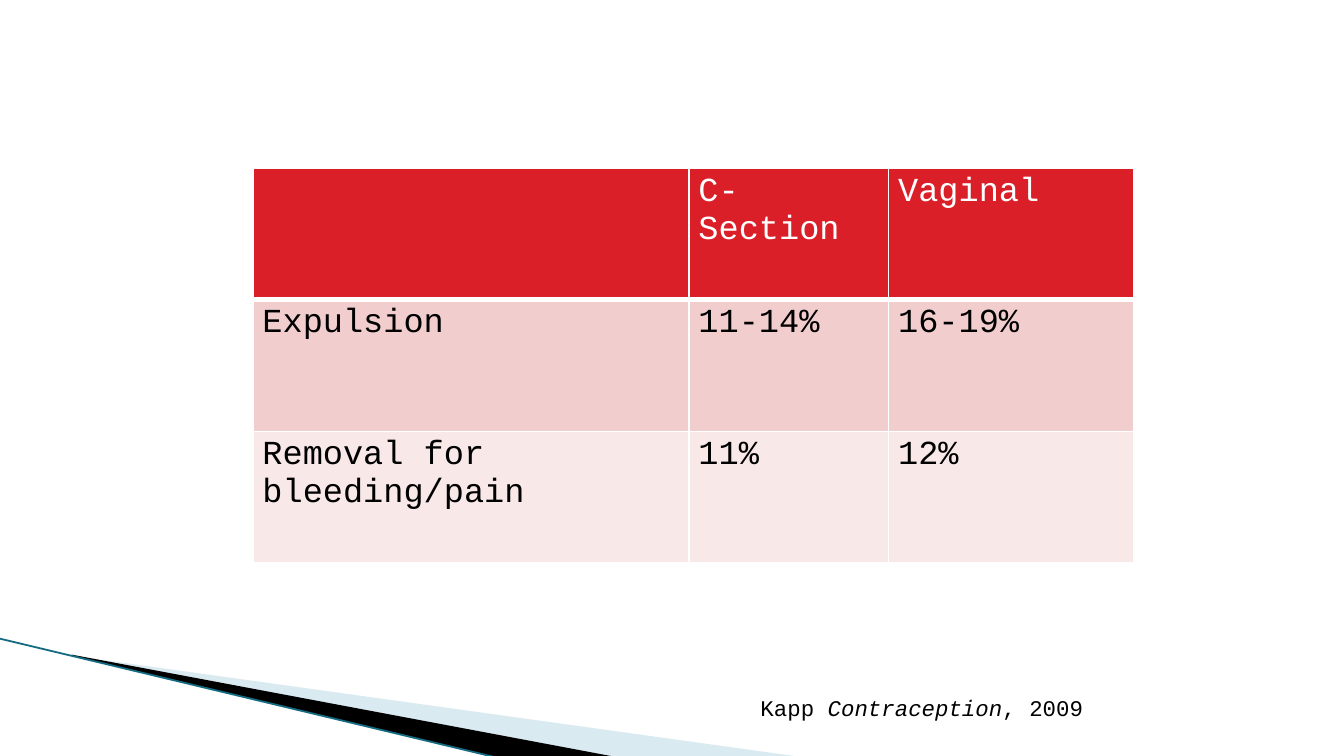
from lxml.etree import SubElement
from pptx import Presentation
from pptx.dml.color import RGBColor
from pptx.enum.shapes import MSO_CONNECTOR
from pptx.enum.text import MSO_AUTO_SIZE
from pptx.oxml.ns import qn
from pptx.util import Pt

FONT = "Courier New"
BLACK, WHITE = "000000", "FFFFFF"
ROW_FILLS = ["DA1F28", "F1CDCD", "F8E8E8"]
RATES = [
    ["", "C-Section", "Vaginal"],
    ["Expulsion", "11-14%", "16-19%"],
    ["Removal for bleeding/pain", "11%", "12%"],
]


def paint(target, color):
    """Give a fill a solid colour."""
    target.solid()
    target.fore_color.rgb = RGBColor.from_string(color)


def add_run(paragraph, text, size, color, italic=False):
    run = paragraph.add_run()
    run.text = text
    formats = {"name": FONT, "size": Pt(size), "bold": False, "italic": italic}
    for key, value in formats.items():
        setattr(run.font, key, value)
    paint(run.font.fill, color)


def add_wedge(slide, left, top, points, color, opacity=100):
    (x, y), *rest = [(Pt(left + dx), Pt(top + dy)) for dx, dy in points]
    builder = slide.shapes.build_freeform(x, y)
    builder.add_line_segments(rest, close=True)
    wedge = builder.convert_to_shape()
    wedge.shadow.inherit = False
    paint(wedge.fill, color)
    wedge.line.fill.background()
    if opacity < 100:
        tint = wedge.fill._xPr.find(qn("a:solidFill"))[0]
        SubElement(tint, qn("a:alpha"), val=str(opacity * 1000))


def add_corner_sweep(slide, left, top):
    # Pale and black wedges
    add_wedge(slide, left, top, [(39.6, 9.4), (428.4, 63.4), (328.3, 63.4)],
              "A0CBDC", opacity=40)
    add_wedge(slide, left, top,
              [(38.2, 8.7), (329, 63.4), (267.8, 64.1), (38.9, 9.4)], BLACK)
    # Thin edge line
    edge = slide.shapes.add_connector(
        MSO_CONNECTOR.STRAIGHT, Pt(left - 0.7), Pt(top),
        Pt(left + 267.1), Pt(top + 64.1))
    paint(edge.line.fill, "146C82")
    edge.line.width = Pt(0.95)
    SubElement(edge._element.spPr, qn("a:effectLst"))


def set_borders(cell, bottom):
    properties = cell._tc.get_or_add_tcPr()
    widths = {"lnL": 1, "lnR": 1, "lnT": 1, "lnB": bottom}
    for position, (side, width) in enumerate(widths.items()):
        border = SubElement(properties, qn(f"a:{side}"), w=str(Pt(width)))
        fill = SubElement(border, qn("a:solidFill"))
        SubElement(fill, qn("a:srgbClr"), val=WHITE)
        properties.insert(position, border)


def add_rate_table(slide, left, top, column_widths, row_height):
    table = slide.shapes.add_table(
        len(RATES), len(column_widths), Pt(left), Pt(top),
        Pt(sum(column_widths)), Pt(row_height * len(RATES))).table
    for column, width in zip(table.columns, column_widths):
        column.width = Pt(width)
    margins = {"margin_left": 5.2, "margin_right": 5.2,
               "margin_top": 2.6, "margin_bottom": 2.6}
    for r, (row, labels) in enumerate(zip(table.rows, RATES)):
        row.height = Pt(row_height)
        for cell, label in zip(row.cells, labels):
            for key, value in margins.items():
                setattr(cell, key, Pt(value))
            paint(cell.fill, ROW_FILLS[r])
            set_borders(cell, bottom=1 if r else 3)
            if label:
                add_run(cell.text_frame.paragraphs[0], label, 18,
                        BLACK if r else WHITE)


def add_citation(slide, left, top, width, height):
    frame = slide.shapes.add_textbox(
        Pt(left), Pt(top), Pt(width), Pt(height)).text_frame
    frame.word_wrap = True
    frame.auto_size = MSO_AUTO_SIZE.SHAPE_TO_FIT_TEXT
    for text, italic in [("Kapp ", False), ("Contraception", True),
                         (", 2009", False)]:
        add_run(frame.paragraphs[0], text, 12, BLACK, italic)


def main():
    deck = Presentation()
    deck.slide_width, deck.slide_height = Pt(720), Pt(405)
    slide = deck.slides.add_slide(deck.slide_layouts[6])
    paint(slide.background.fill, WHITE)
    add_corner_sweep(slide, 0, 342)
    add_citation(slide, 400.3, 368.6, 260.6, 21.6)
    add_rate_table(slide, 135.4, 90.3, [233.6, 107, 131.5], 70.4)
    deck.save("out.pptx")


if __name__ == "__main__":
    main()
